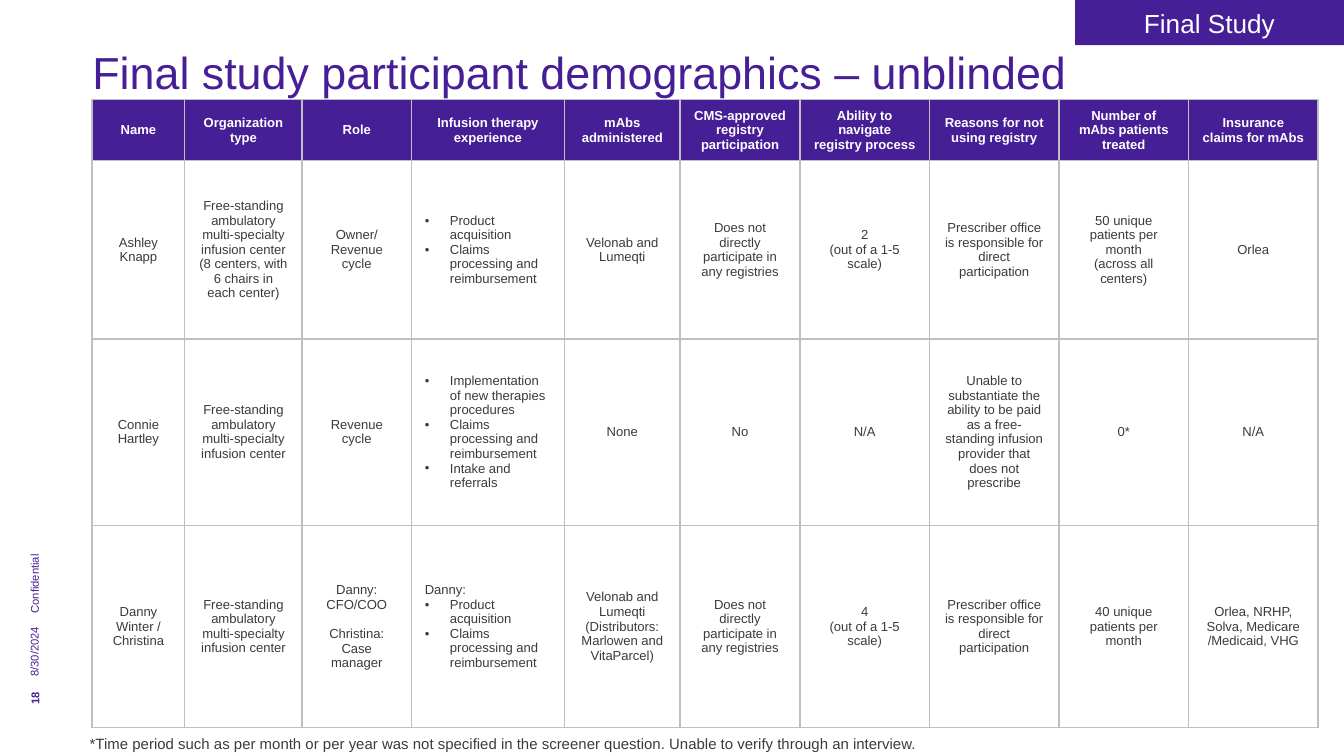
from dataclasses import dataclass

from lxml import etree
from pptx import Presentation
from pptx.dml.color import RGBColor
from pptx.enum.shapes import MSO_SHAPE
from pptx.enum.text import MSO_ANCHOR, MSO_AUTO_SIZE, PP_ALIGN
from pptx.oxml.ns import qn
from pptx.util import Pt

LEFT, MID = PP_ALIGN.LEFT, PP_ALIGN.CENTER
TOP, CENTER = MSO_ANCHOR.TOP, MSO_ANCHOR.MIDDLE
FIXED = MSO_AUTO_SIZE.NONE
RECT = MSO_SHAPE.RECTANGLE


@dataclass(frozen=True)
class Theme:
    font: str = "Arial"
    brand: str = "461E96"
    ink: str = "3B3B3B"
    white: str = "FFFFFF"
    grid: str = "BFBFBF"
    title: float = 24
    tag: float = 14
    note: float = 8
    body: float = 7
    side: float = 6


THEME = Theme()
BULLET = "• "
HANG = 13.5
GAP = 8  # space between the two people in one cell

COLS = [49.5, 63, 58.5, 82, 62, 64.2] + [69.4] * 4
ROWS = [32.7, 95.4, 100, 108.3]

HEADS = [
    "Name", "Organization type", "Role", "Infusion therapy experience",
    "mAbs administered", "CMS-approved registry participation",
    "Ability to navigate registry process", "Reasons for not using registry",
    "Number of mAbs patients treated", "Insurance claims for mAbs",
]

CENTRE = "Free-standing ambulatory multi-specialty infusion center"
CLAIMS = "• Claims processing and reimbursement"
BUY = "• Product acquisition"
SCALE = "(out of a 1-5 scale)"
NOT_IN = "Does not directly participate in any registries"
OFFICE = "Prescriber office is responsible for direct participation"

# One string per cell; each line is a paragraph
PEOPLE = [
    ["Ashley Knapp",
     f"{CENTRE}\n(8 centers, with 6 chairs in each center)",
     "Owner/ Revenue cycle",
     f"{BUY}\n{CLAIMS}",
     "Velonab and\nLumeqti",
     NOT_IN,
     f"2\n{SCALE}",
     OFFICE,
     "50 unique patients per month\n(across all centers)",
     "Orlea"],
    ["Connie Hartley",
     CENTRE,
     "Revenue cycle",
     f"• Implementation of new therapies procedures\n{CLAIMS}\n"
     "• Intake and referrals",
     "None",
     "No",
     "N/A",
     "Unable to substantiate the ability to be paid as a free-standing "
     "infusion provider that does not prescribe",
     "0*",
     "N/A"],
    ["Danny Winter / Christina",
     CENTRE,
     "Danny: CFO/COO\nChristina: Case manager",
     f"Danny:\n{BUY}\n{CLAIMS}",
     "Velonab and\nLumeqti (Distributors: Marlowen and VitaParcel)",
     NOT_IN,
     f"4\n{SCALE}",
     OFFICE,
     "40 unique patients per month",
     "Orlea, NRHP, Solva, Medicare\n/Medicaid, VHG"],
]

# Side label: text, left, top, width, bold
SIDE = [
    ("8/30/2024", 1.4, 341.3, 33.8, False),
    ("Confidential", -50.4, 255.6, 137.5, False),
    ("18", 11.5, 365.8, 14.4, True),
]


def write(frame, text, size=THEME.body, color=THEME.ink, bold=False,
          align=LEFT, gap=0):
    """Fill a text frame, one paragraph per line of text."""
    for i, line in enumerate(text.split("\n")):
        para = frame.paragraphs[0] if i == 0 else frame.add_paragraph()
        para.alignment = align
        if i and gap:
            para.space_before = Pt(gap)
        if line.startswith(BULLET):
            dot(para)
        run = para.add_run()
        run.text = line.removeprefix(BULLET)
        font = run.font
        font.name, font.size, font.bold = THEME.font, Pt(size), bold
        font.color.rgb = RGBColor.from_string(color)


def dot(para):
    """Give a paragraph a hanging bullet."""
    props = para._p.get_or_add_pPr()
    props.set("marL", str(Pt(HANG)))
    props.set("indent", str(-Pt(HANG)))
    etree.SubElement(props, qn("a:buFont"), typeface=THEME.font)
    etree.SubElement(props, qn("a:buChar"), char=BULLET.strip())


def setup(frame, anchor, inset=None):
    """Set wrap, anchor and insets of a text frame."""
    frame.auto_size = FIXED
    frame.word_wrap = True
    frame.vertical_anchor = anchor
    if inset is not None:
        frame.margin_left = frame.margin_right = Pt(inset)
        frame.margin_top = frame.margin_bottom = Pt(inset)


def label(slide, text, area, anchor=TOP, inset=None, turn=0, **style):
    box = slide.shapes.add_textbox(*map(Pt, area))
    box.rotation = turn
    setup(box.text_frame, anchor, inset)
    write(box.text_frame, text, **style)


def head(slide, text):
    title = slide.shapes.title
    title.left, title.top, title.width, title.height = map(
        Pt, (49.5, 23, 649.5, 31))
    setup(title.text_frame, CENTER, 0)
    write(title.text_frame, text, size=THEME.title, color=THEME.brand)


def tag(slide, text):
    box = slide.shapes.add_shape(RECT, Pt(576), Pt(0), Pt(144), Pt(24.2))
    box.shadow.inherit = False
    box.fill.solid()
    box.fill.fore_color.rgb = RGBColor.from_string(THEME.brand)
    box.line.fill.background()
    setup(box.text_frame, CENTER)
    write(box.text_frame, text, size=THEME.tag, color=THEME.white, align=MID)


def edge(cell):
    """Draw the four borders of a cell."""
    props = cell._tc.get_or_add_tcPr()
    for side in ("lnL", "lnR", "lnT", "lnB"):
        line = etree.SubElement(props, qn(f"a:{side}"), w=str(Pt(1)))
        fill = etree.SubElement(line, qn("a:solidFill"))
        etree.SubElement(fill, qn("a:srgbClr"), val=THEME.grid)


def grid(slide, data):
    table = slide.shapes.add_table(
        len(ROWS), len(COLS), Pt(49.4), Pt(53.4),
        Pt(sum(COLS)), Pt(sum(ROWS))).table
    table.horz_banding = False
    for col, width in zip(table.columns, COLS):
        col.width = Pt(width)
    for r, (row, high) in enumerate(zip(table.rows, ROWS)):
        row.height = Pt(high)
        for c, cell in enumerate(row.cells):
            text = data[r][c]
            cell.vertical_anchor = CENTER
            edge(cell)
            if r == 0:
                cell.fill.solid()
                cell.fill.fore_color.rgb = RGBColor.from_string(THEME.brand)
            else:
                cell.fill.background()
            write(cell.text_frame, text, bold=r == 0,
                  color=THEME.ink if r else THEME.white,
                  align=LEFT if BULLET in text else MID,
                  gap=GAP if HEADS[c] == "Role" else 0)


def main():
    deck = Presentation()
    deck.slide_width, deck.slide_height = Pt(720), Pt(405)
    slide = deck.slides.add_slide(deck.slide_layouts[5])

    # Title and side labels
    head(slide, "Final study participant demographics – unblinded")
    for text, left, top, width, bold in SIDE:
        label(slide, text, (left, top, width, 8.6), anchor=CENTER, inset=0,
              turn=270, size=THEME.side, color=THEME.brand, bold=bold)

    # Participants
    grid(slide, [HEADS] + PEOPLE)

    # Section tag and footnote
    tag(slide, "Final Study")
    label(slide, "*Time period such as per month or per year was not specified "
          "in the screener question. Unable to verify through an interview.",
          (41, 389.8, 518.4, 26.6), size=THEME.note)

    deck.save("out.pptx")


if __name__ == "__main__":
    main()
